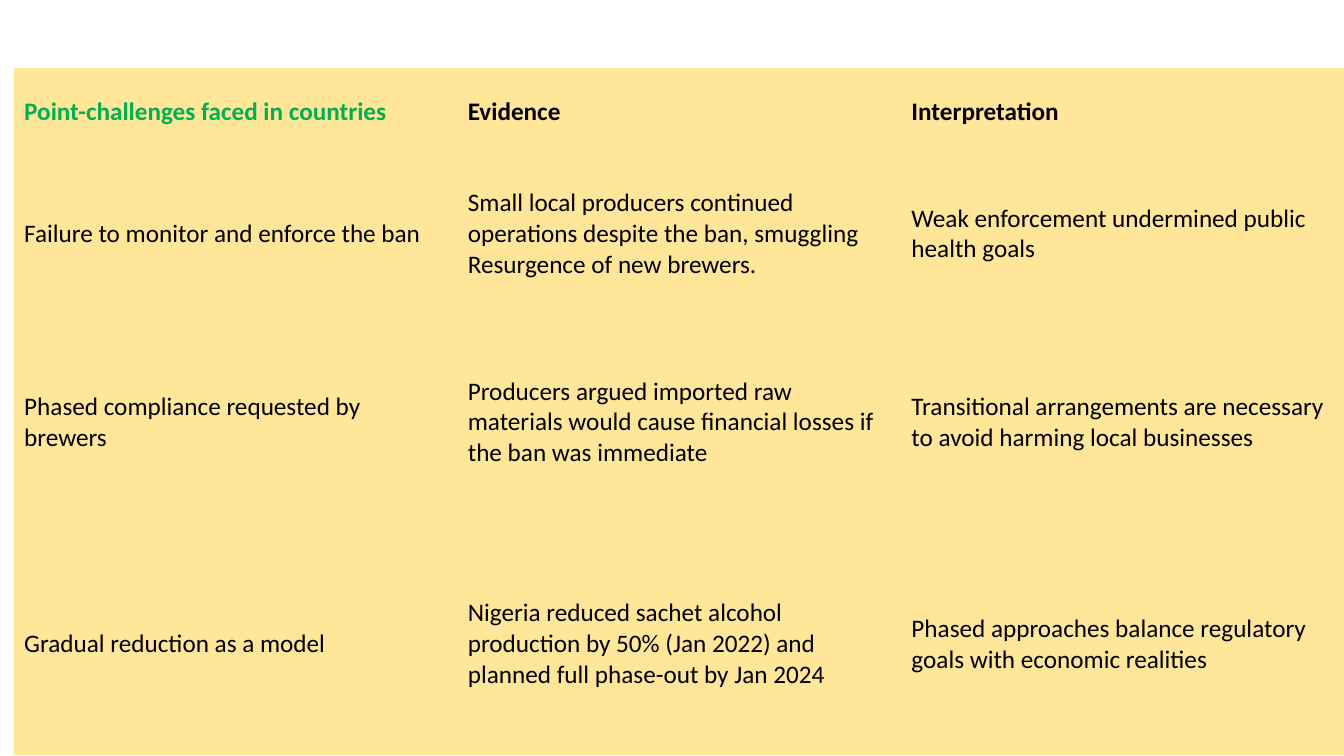
from pptx import Presentation
from pptx.dml.color import RGBColor
from pptx.enum.text import MSO_ANCHOR
from pptx.oxml.ns import qn
from pptx.util import Inches, Pt

ROWS = [
    ("Point-challenges faced in countries", "Evidence", "Interpretation"),
    ("Failure to monitor and enforce the ban",
     "Small local producers continued operations despite the ban, smuggling "
     "Resurgence of new brewers.",
     "Weak enforcement undermined public health goals"),
    ("Phased compliance requested by brewers",
     "Producers argued imported raw materials would cause financial losses "
     "if the ban was immediate",
     "Transitional arrangements are necessary to avoid harming local businesses"),
    ("Gradual reduction as a model",
     "Nigeria reduced sachet alcohol production by 50% (Jan 2022) and "
     "planned full phase-out by Jan 2024",
     "Phased approaches balance regulatory goals with economic realities"),
]
HEIGHTS = [0.88, 1.54, 2.2, 2.2]
WIDTH = 4.4


def color(code):
    return RGBColor.from_string(code)


deck = Presentation()
deck.slide_width = Inches(13.33)
deck.slide_height = Inches(7.5)
slide = deck.slides.add_slide(deck.slide_layouts[6])

# Table without style or grid lines
table = slide.shapes.add_table(
    len(ROWS), 3, Inches(0.14), Inches(0.67),
    Inches(3 * WIDTH), Inches(sum(HEIGHTS))).table
style = table._tbl.tblPr.find(qn("a:tableStyleId"))
style.text = "{2D5ABB26-0587-4C30-8999-92F81FD0307C}"
table.horz_banding = False

for col in table.columns:
    col.width = Inches(WIDTH)
for row, height in zip(table.rows, HEIGHTS):
    row.height = Inches(height)

# Cell text and fill
for r, texts in enumerate(ROWS):
    for c, text in enumerate(texts):
        cell = table.cell(r, c)
        cell.fill.solid()
        cell.fill.fore_color.rgb = color("FFE699")
        cell.vertical_anchor = MSO_ANCHOR.MIDDLE
        cell.text_frame.text = text
        font = cell.text_frame.paragraphs[0].runs[0].font
        font.name = "Calibri"
        font.size = Pt(18)
        font.bold = r == 0
        font.color.rgb = color("00B050" if r == c == 0 else "000000")

deck.save("out.pptx")
